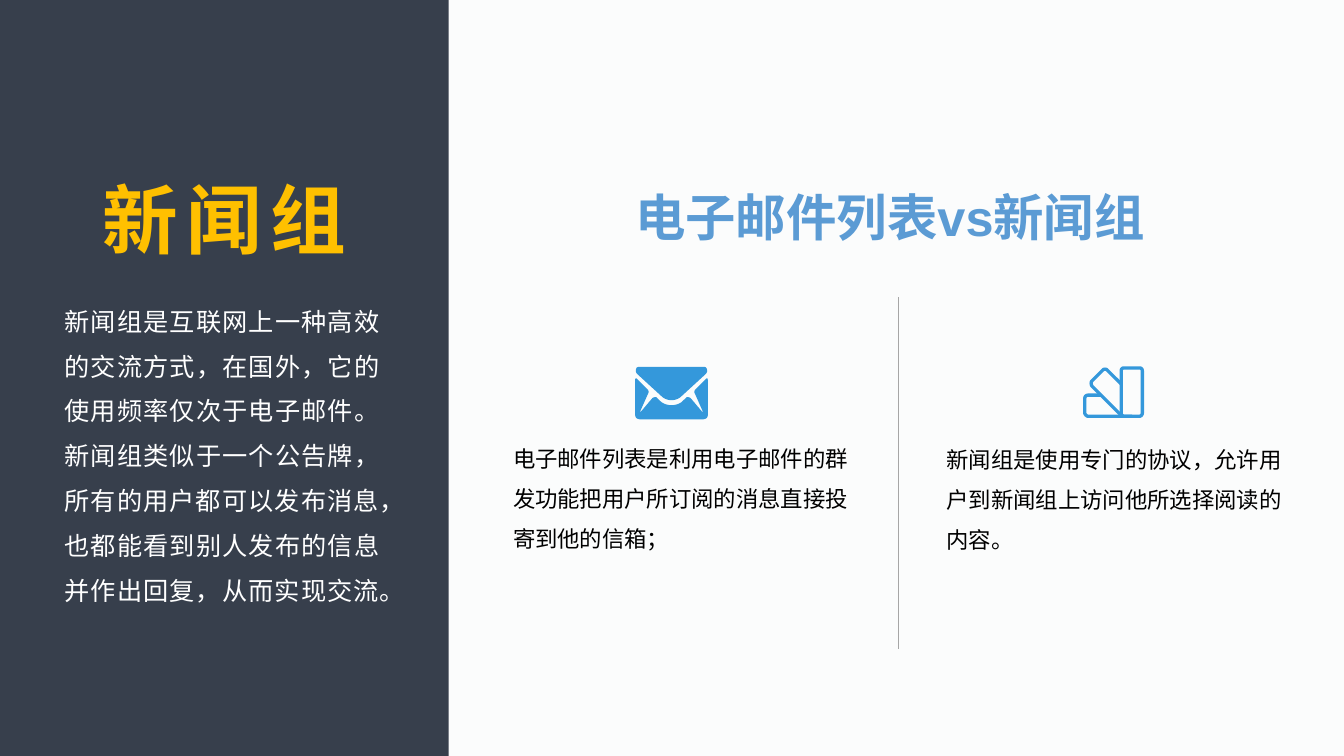
from lxml import etree
from pptx import Presentation
from pptx.dml.color import RGBColor
from pptx.enum.shapes import MSO_CONNECTOR, MSO_SHAPE
from pptx.enum.text import MSO_ANCHOR, PP_ALIGN
from pptx.oxml.ns import qn
from pptx.util import Inches, Pt

RECT = MSO_SHAPE.RECTANGLE
STRAIGHT = MSO_CONNECTOR.STRAIGHT
TOP = MSO_ANCHOR.TOP
LEFT, CENTER, JUSTIFY = PP_ALIGN.LEFT, PP_ALIGN.CENTER, PP_ALIGN.JUSTIFY

COLORS = {
    name: RGBColor.from_string(value)
    for name, value in {
        "page": "FBFCFC", "panel": "373F4C", "gold": "FFC000", "white": "FFFFFF",
        "black": "000000", "title": "5B9BD4", "icon": "3498DB", "rule": "A6A6A6",
    }.items()
}
LINE_HEIGHT = 1.19
CURVE_STEPS = 6
ENVELOPE_AXIS = 6.66

prs = Presentation()
prs.slide_width, prs.slide_height = Inches(13.33), Inches(7.5)
W, H = prs.slide_width, prs.slide_height
s = prs.slides.add_slide(prs.slide_layouts[6])
s.background.fill.solid()
s.background.fill.fore_color.rgb = COLORS["page"]


def flatten(start, steps):
    points = [start]
    for step in steps:
        if len(step) == 2:
            points.append(step)
            continue
        x0, y0 = points[-1]
        x1, y1, x2, y2, x3, y3 = step
        for i in range(1, CURVE_STEPS + 1):
            t = i / CURVE_STEPS
            a, b, c, d = (1 - t) ** 3, 3 * t * (1 - t) ** 2, 3 * t * t * (1 - t), t ** 3
            points.append((a * x0 + b * x1 + c * x2 + d * x3,
                           a * y0 + b * y1 + c * y2 + d * y3))
    return points


def add_outline(contours, close):
    builder = None
    for contour in contours:
        points = [(Inches(x), Inches(y)) for x, y in contour]
        if builder is None:
            builder = s.shapes.build_freeform(*points[0], scale=1.0)
        else:
            builder.move_to(*points[0])
        builder.add_line_segments(points[1:], close=close)
    sp = builder.convert_to_shape()
    sp.shadow.inherit = False
    return sp


panel = s.shapes.add_shape(RECT, 0, 0, Inches(4.45), H)
panel.shadow.inherit = False
panel.fill.solid()
panel.fill.fore_color.rgb = COLORS["panel"]
panel.line.fill.background()

rule = s.shapes.add_connector(STRAIGHT, Inches(8.91), Inches(2.95), Inches(8.91), Inches(6.44))
rule.line.color.rgb = COLORS["rule"]
rule.line.width = Pt(0.5)
etree.SubElement(rule._element.spPr, qn("a:effectLst"))

fan_blades = [
    ((10.92, 3.92), [(10.79, 3.92), (10.78, 3.92, 10.76, 3.93, 10.76, 3.95), (10.76, 4.1),
                     (10.76, 4.11, 10.78, 4.13, 10.79, 4.13), (11.23, 4.13)], False),
    ((11.12, 3.81), [(10.98, 3.67), (10.97, 3.66, 10.95, 3.66, 10.94, 3.67), (10.83, 3.78),
                     (10.82, 3.79, 10.82, 3.81, 10.83, 3.83), (11.12, 4.12)], False),
    ((11.3, 4.13), [(11.32, 4.13, 11.33, 4.11, 11.33, 4.1), (11.33, 3.68),
                    (11.33, 3.66, 11.32, 3.65, 11.3, 3.65), (11.15, 3.65),
                    (11.13, 3.65, 11.12, 3.66, 11.12, 3.68), (11.12, 4.1),
                    (11.12, 4.11, 11.13, 4.13, 11.15, 4.13)], True),
]
for start, steps, close in fan_blades:
    blade = add_outline([flatten(start, steps)], close)
    blade.fill.background()
    blade.line.color.rgb = COLORS["icon"]
    blade.line.width = Pt(2.38)

flap_half = flatten((6.66, 3.64), [
    (6.34, 3.64), (6.32, 3.64, 6.31, 3.65, 6.31, 3.66), (6.3, 3.68, 6.31, 3.7, 6.32, 3.71),
    (6.56, 3.93), (6.59, 3.96, 6.63, 3.97, 6.66, 3.97)])
body_half = flatten((6.66, 4.02), [
    (6.63, 4.02, 6.58, 4.01, 6.55, 3.98), (6.51, 3.94), (6.49, 3.94, 6.48, 3.94, 6.47, 3.95),
    (6.36, 4.08), (6.35, 4.09, 6.35, 4.09, 6.35, 4.08), (6.43, 3.9),
    (6.44, 3.89, 6.43, 3.87, 6.42, 3.86), (6.32, 3.76), (6.31, 3.75, 6.3, 3.75, 6.3, 3.77),
    (6.3, 4.12), (6.3, 4.16, 6.35, 4.16, 6.35, 4.16), (6.66, 4.16)])
envelope = add_outline(
    [half + [(2 * ENVELOPE_AXIS - x, y) for x, y in reversed(half)]
     for half in (flap_half, body_half)], True)
envelope.fill.solid()
envelope.fill.fore_color.rgb = COLORS["icon"]
envelope.line.fill.background()

texts = [
    ("新闻组", (0.33, 1.58, 3.79, 1.23), 54, "Arial", "gold", True, CENTER, 1.1, 600),
    ("新闻组是互联网上一种高效的交流方式，在国外，它的使用频率仅次于电子邮件。"
     "新闻组类似于一个公告牌，所有的用户都可以发布消息，也都能看到别人发布的信息"
     "并作出回复，从而实现交流。",
     (0.54, 2.84, 3.33, 3.22), 18, "Noto Sans CJK SC", "white", False, JUSTIFY, 1.5, 50),
    ("电子邮件列表是利用电子邮件的群发功能把用户所订阅的消息直接投寄到他的信箱；",
     (4.99, 4.24, 3.66, 1.53), 16, "Arial", "black", False, LEFT, 1.5, 0),
    ("新闻组是使用专门的协议，允许用户到新闻组上访问他所选择阅读的内容。",
     (9.29, 4.25, 3.66, 1.53), 16, "Arial", "black", False, LEFT, 1.5, 0),
    ("电子邮件列表vs新闻组", (6.2, 1.8, 5.26, 0.71), 36, "Arial", "title", True, LEFT, 1, 0),
]
for text, box, size, font, color, bold, align, spacing, tracking in texts:
    tf = s.shapes.add_textbox(*map(Inches, box)).text_frame
    tf.word_wrap = True
    tf.vertical_anchor = TOP
    p = tf.paragraphs[0]
    p.alignment = align
    p.line_spacing = Pt(round(size * spacing * LINE_HEIGHT, 1))
    r = p.add_run()
    r.text = text
    r.font.size, r.font.name, r.font.bold = Pt(size), font, bold
    r.font.color.rgb = COLORS[color]
    rPr = r._r.get_or_add_rPr()
    etree.SubElement(rPr, qn("a:ea")).set("typeface", font)
    if tracking:
        rPr.set("spc", str(tracking))

prs.save("out.pptx")
